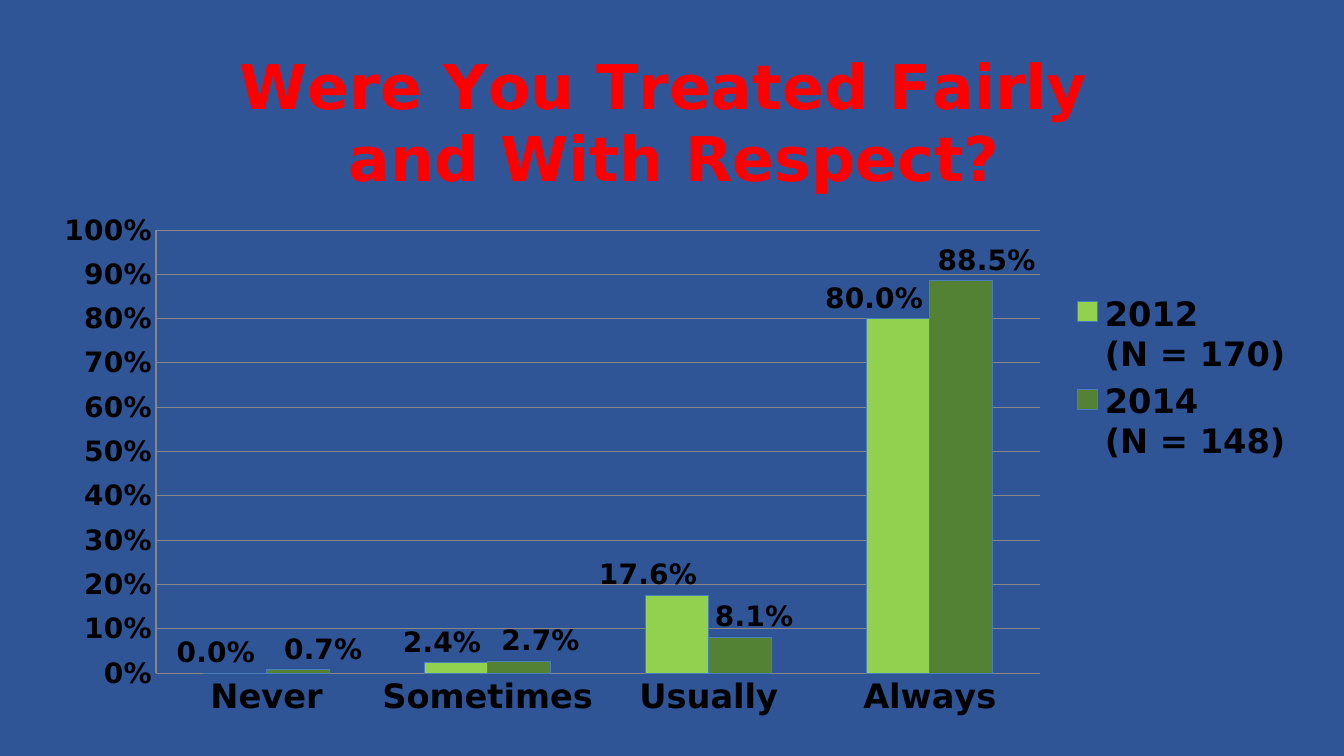
from lxml import etree
from pptx import Presentation
from pptx.chart.data import CategoryChartData
from pptx.dml.color import RGBColor
from pptx.enum.chart import XL_CHART_TYPE, XL_LEGEND_POSITION, XL_TICK_MARK
from pptx.oxml.ns import qn
from pptx.util import Inches, Pt

CLUSTERED = XL_CHART_TYPE.COLUMN_CLUSTERED
RIGHT = XL_LEGEND_POSITION.RIGHT
NO_TICK = XL_TICK_MARK.NONE

TITLE = "Were You Treated Fairly \nand With Respect?"
ANSWERS = ["Never", "Sometimes", "Usually", "Always"]
SERIES = [
    {"name": "2012\n(N = 170)", "values": [0, 0.024, 0.176, 0.8],
     "color": "light", "label_shifts": [-0.015, -0.011, -0.023, -0.019]},
    {"name": "2014\n(N = 148)", "values": [0.007, 0.027, 0.081, 0.885],
     "color": "dark", "label_shifts": [0.02, 0.017, 0.011, 0.02]},
]
COLORS = {"background": "2F5597", "title": "FF0000", "text": "000000",
          "light": "92D050", "dark": "548235", "edge": "4A7EBB", "grid": "878787"}
FONT = "DejaVu Sans"


def color(name):
    return RGBColor.from_string(COLORS[name])


def style_font(font, size, name="text"):
    font.name, font.size, font.bold = FONT, Pt(size), True
    font.color.rgb = color(name)


def style_line(line, name):
    line.color.rgb = color(name)
    line.width = Pt(0.75)


def place(parent, index, edge=False, inner=False, **fractions):
    for old in parent.findall(qn("c:layout")):
        parent.remove(old)
    layout = etree.Element(qn("c:layout"))
    manual = etree.SubElement(layout, qn("c:manualLayout"))
    settings = {"layoutTarget": "inner"} if inner else {}
    if edge:
        settings.update(xMode="edge", yMode="edge")
    settings.update(fractions)
    for tag, value in settings.items():
        etree.SubElement(manual, qn("c:" + tag)).set("val", str(value))
    parent.insert(index, layout)


deck = Presentation()
deck.slide_width, deck.slide_height = Inches(13.33), Inches(7.5)
page = deck.slides.add_slide(deck.slide_layouts[6])
page.background.fill.solid()
page.background.fill.fore_color.rgb = color("background")

data = CategoryChartData(number_format="0.0%")
data.categories = ANSWERS
for entry in SERIES:
    data.add_series(entry["name"], entry["values"])
chart = page.shapes.add_chart(CLUSTERED, Inches(0.4), Inches(0.25),
                              Inches(12.54), Inches(7.01), data).chart
chart.font.name, chart.font.size = "Calibri", Pt(10)

chart.has_title = True
chart.chart_title.text_frame.text = TITLE
for para in chart.chart_title.text_frame.paragraphs:
    style_font(para.font, 44, "title")
    for span in para.runs:
        style_font(span.font, 44, "title")

chart.has_legend = True
chart.legend.position = RIGHT
chart.legend.include_in_layout = False
style_font(chart.legend.font, 24)

for axis, size in ((chart.category_axis, 24), (chart.value_axis, 20)):
    axis.major_tick_mark = axis.minor_tick_mark = NO_TICK
    style_font(axis.tick_labels.font, size)
    style_line(axis.format.line, "grid")
values = chart.value_axis
values.minimum_scale, values.maximum_scale, values.major_unit = 0, 1, 0.1
values.tick_labels.number_format = "0%"
values.tick_labels.number_format_is_linked = False
values.has_major_gridlines = True
style_line(values.major_gridlines.format.line, "grid")

plot = chart.plots[0]
plot.gap_width, plot.overlap, plot.vary_by_categories = 150, 0, False
for series, entry in zip(plot.series, SERIES):
    series.format.fill.solid()
    series.format.fill.fore_color.rgb = color(entry["color"])
    style_line(series.format.line, "edge")
    labels = series.data_labels
    labels.show_value = True
    labels.number_format = "0.0%"
    labels.number_format_is_linked = False
    style_font(labels.font, 20)
    for index in range(len(ANSWERS)):
        style_font(series.points[index].data_label.font, 20)

root = chart.element
shifts = [shift for entry in SERIES for shift in entry["label_shifts"]]
for label, shift in zip(root.iter(qn("c:dLbl")), shifts):
    place(label, 1, x=shift, y=0)
body = root.find(qn("c:chart"))
place(body.find(qn("c:title")), 1, edge=True, x=0.155, y=0.03)
place(body.find(qn("c:plotArea")), 0, edge=True, inner=True,
      x=0.0915, y=0.29, w=0.6995, h=0.627)
place(body.find(qn("c:legend")), 1, edge=True, x=0.81, y=0.37, w=0.185, h=0.26)

deck.save("out.pptx")
